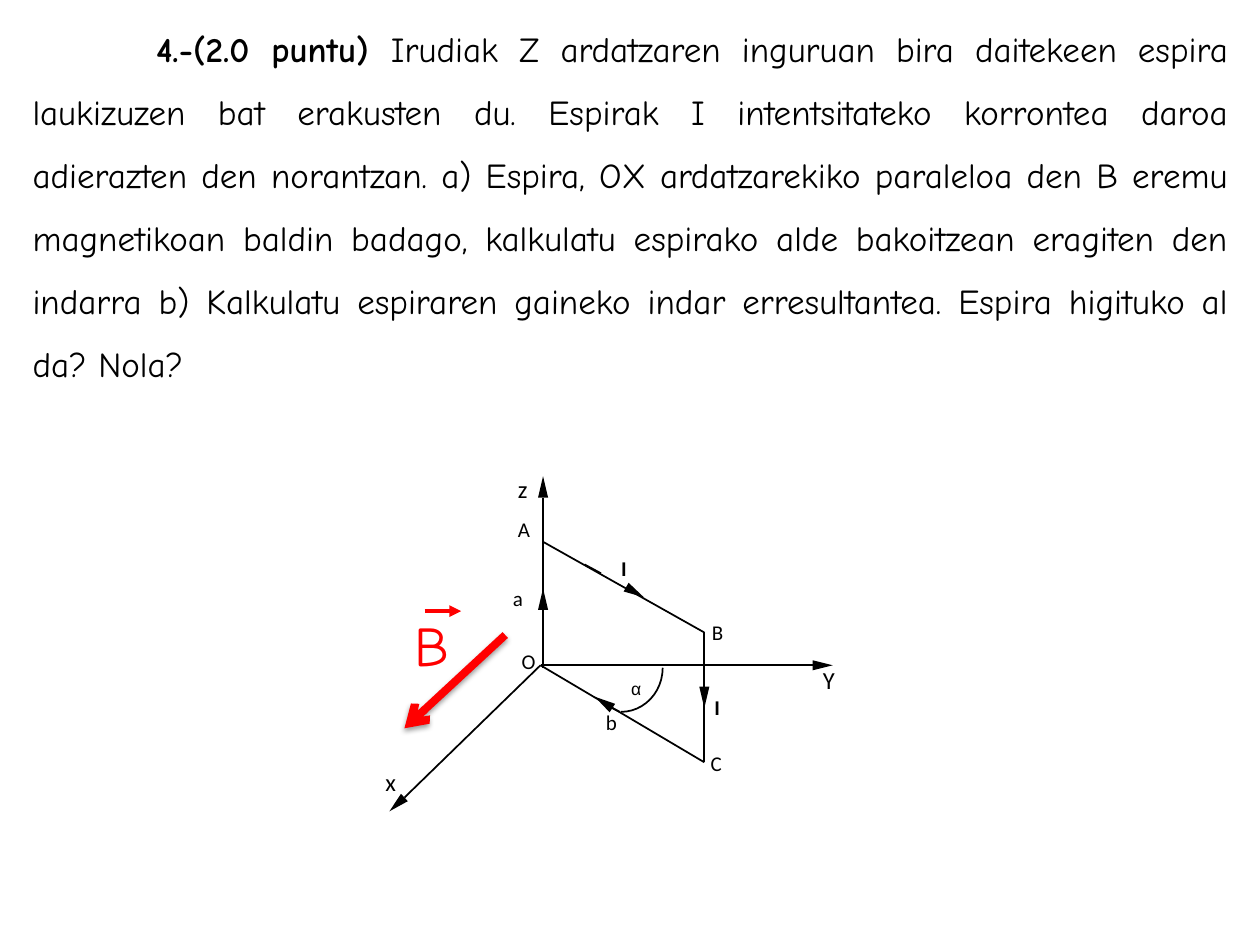
from dataclasses import dataclass
from math import hypot

from lxml.etree import SubElement
from pptx import Presentation
from pptx.dml.color import RGBColor
from pptx.enum.shapes import MSO_CONNECTOR as Link, MSO_SHAPE as Kind
from pptx.enum.text import MSO_AUTO_SIZE as Fit, PP_ALIGN as Align
from pptx.oxml.ns import qn
from pptx.util import Inches, Pt


@dataclass(frozen=True)
class Theme:
    ink: RGBColor = RGBColor(0, 0, 0)
    red: RGBColor = RGBColor(255, 0, 0)
    hand: str = "Comic Neue"
    sans: str = "Calibri"
    greek: str = "Arial"
    body: int = 20
    axis: int = 14
    mark: int = 12
    small: int = 10
    field: int = 32
    thin: float = 1
    mid: float = 2.25
    thick: float = 4.5


LOOK = Theme()
TASK = (
    "Irudiak Z ardatzaren inguruan bira daitekeen espira laukizuzen bat "
    "erakusten du. Espirak I intentsitateko korrontea daroa adierazten den "
    "norantzan. a) Espira, OX ardatzarekiko paraleloa den B eremu magnetikoan "
    "baldin badago, kalkulatu espirako alde bakoitzean eragiten den indarra "
    "b) Kalkulatu espiraren gaineko indar erresultantea. Espira higituko al "
    "da? Nola?"
)


def add_text(slide, box, text, size, font, color=LOOK.ink, wrap=False, inset=None):
    shape = slide.shapes.add_textbox(*map(Inches, box))
    frame = shape.text_frame
    frame.word_wrap = wrap
    frame.auto_size = Fit.SHAPE_TO_FIT_TEXT
    if inset is not None:
        frame.margin_left = frame.margin_right = Inches(inset)
        frame.margin_top = frame.margin_bottom = Inches(inset)
    para = frame.paragraphs[0]
    para.text = text
    para.font.size = Pt(size)
    para.font.name = font
    para.font.color.rgb = color
    return para


def add_line(slide, start, end, color=LOOK.ink, width=LOOK.thin, tip=None, shade=False):
    line = slide.shapes.add_connector(Link.STRAIGHT, *map(Inches, start + end))
    line.line.color.rgb = color
    line.line.width = Pt(width)
    props = line._element.spPr
    if tip:
        SubElement(props.find(qn("a:ln")), qn("a:tailEnd"), type=tip)
    effect = SubElement(props, qn("a:effectLst"))
    if shade:
        cast = SubElement(effect, qn("a:outerShdw"), blurRad="40000",
                          dist="20000", dir="5400000", rotWithShape="0")
        tint = SubElement(cast, qn("a:srgbClr"), val="000000")
        SubElement(tint, qn("a:alpha"), val="38000")


def add_head(slide, tip, base, half=0.04):
    (tx, ty), (bx, by) = tip, base
    span = hypot(tx - bx, ty - by)
    dx, dy = half * (ty - by) / span, half * (bx - tx) / span
    points = [tip, (bx + dx, by + dy), (bx - dx, by - dy)]
    (first, *rest) = [(Inches(x), Inches(y)) for x, y in points]
    pen = slide.shapes.build_freeform(*first)
    pen.add_line_segments(rest, close=True)
    head = pen.convert_to_shape()
    head.shadow.inherit = False
    head.fill.solid()
    head.fill.fore_color.rgb = LOOK.ink
    head.line.fill.background()


def draw_task(slide, box):
    para = add_text(slide, box, "4.-(2.0 puntu) ", LOOK.body, LOOK.hand, wrap=True)
    para.runs[0].font.bold = True
    para.add_run().text = TASK
    para.alignment = Align.JUSTIFY
    para.line_spacing = 1.5
    para._p.get_or_add_pPr().set("indent", str(Inches(0.98)))


def draw_loop(slide, left, top):
    def at(x, y):
        return left + x, top + y

    zero, a, b, c = at(1.29, 1.58), at(1.31, 0.6), at(2.59, 1.32), at(2.59, 2.35)
    lines = [
        (at(1.31, 1.6), at(1.31, 0.25)),
        (zero, at(3.45, 1.58)),
        (zero, at(0.21, 2.63)),
        (zero, c), (c, b), (b, a),
        (at(1.64, 0.78), at(1.77, 0.85)),
        (at(1.92, 1.95), at(1.86, 1.92)),
    ]
    for start, end in lines:
        add_line(slide, start, end)

    heads = [
        (at(1.31, 0.08), at(1.31, 0.25)),
        (at(3.61, 1.58), at(3.45, 1.58)),
        (at(0.09, 2.74), at(0.21, 2.63)),
        (at(2.11, 1.04), at(1.97, 0.96)),
        (at(1.72, 1.83), at(1.86, 1.92)),
        (at(1.31, 0.97), at(1.31, 1.14)),
        (at(2.59, 1.92), at(2.59, 1.75)),
    ]
    for tip, base in heads:
        add_head(slide, tip, base)

    arc = slide.shapes.add_shape(
        Kind.ARC, *map(Inches, at(1.6, 1.25) + (0.66, 0.7)))
    arc.adjustments[0], arc.adjustments[1] = 0, 54
    arc.shadow.inherit = False
    arc.fill.background()
    arc.line.color.rgb = LOOK.ink
    arc.line.width = Pt(LOOK.thin)

    marks = [
        ("A", 1.11, 0.4, 0.17), ("B", 2.65, 1.22, 0.18),
        ("C", 2.64, 2.26, 0.19), ("O", 1.14, 1.45, 0.19),
        ("I", 2.67, 1.81, 0.12), ("I", 1.93, 0.71, 0.12),
        ("a", 1.07, 0.95, 0.17), ("b", 1.81, 1.93, 0.17),
    ]
    for name, x, y, wide in marks:
        para = add_text(slide, at(x, y) + (wide, 0.25), name,
                        LOOK.mark, LOOK.sans, inset=0)
        para.font.bold = name == "I"
    for name, x, y, wide in [("Y", 3.53, 1.58, 0.21), ("x", 0.06, 2.39, 0.17),
                             ("z", 1.11, 0.06, 0.17)]:
        add_text(slide, at(x, y) + (wide, 0.26), name, LOOK.axis, LOOK.sans, inset=0)
    add_text(slide, at(2.01, 1.68) + (0.09, 0.17), "α",
             LOOK.small, LOOK.greek, inset=0)


def draw_field(slide, left, top):
    add_line(slide, (left + 0.82, top + 0.24), (left + 0.02, top + 0.98),
             LOOK.red, LOOK.thick, "arrow", True)
    add_text(slide, (left, top, 0.54, 0.63), "B", LOOK.field, LOOK.hand, LOOK.red)
    add_line(slide, (left + 0.18, top + 0.05), (left + 0.47, top + 0.05),
             LOOK.red, LOOK.mid, "triangle")


def main():
    deck = Presentation()
    deck.slide_width, deck.slide_height = Inches(10), Inches(7.5)
    slide = deck.slides.add_slide(deck.slide_layouts[6])
    draw_task(slide, (0.16, 0, 9.69, 3.13))
    draw_loop(slide, 3, 3.7)
    draw_field(slide, 3.19, 4.8)
    deck.save("out.pptx")


if __name__ == "__main__":
    main()
